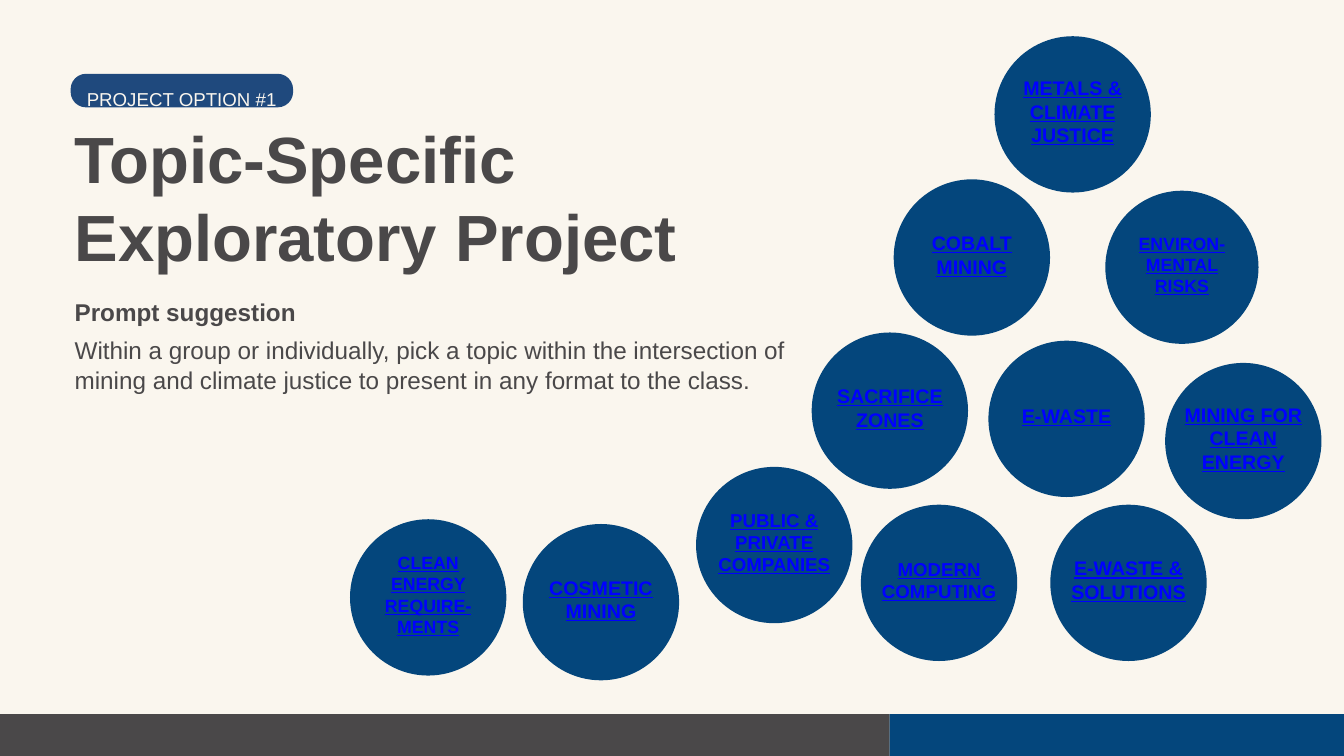
from pptx import Presentation
from pptx.dml.color import RGBColor
from pptx.enum.shapes import MSO_SHAPE
from pptx.enum.text import MSO_ANCHOR, MSO_AUTO_SIZE, PP_ALIGN
from pptx.oxml.ns import qn
from pptx.util import Cm, Pt

RECTANGLE = MSO_SHAPE.RECTANGLE
OVAL = MSO_SHAPE.OVAL
ROUNDED = MSO_SHAPE.ROUNDED_RECTANGLE
TOP, MIDDLE = MSO_ANCHOR.TOP, MSO_ANCHOR.MIDDLE
LEFT, CENTER = PP_ALIGN.LEFT, PP_ALIGN.CENTER

CREAM, CHARCOAL, NAVY, PILL_BLUE, LINK_BLUE = "FAF6EE", "4A4849", "04467C", "1F497D", "0000FF"

TOPICS = [
    ("MINING FOR CLEAN ENERGY", 44.04, 13.72, 5.91, 21),
    ("PUBLIC & PRIVATE COMPANIES", 26.31, 17.65, 5.91, 20),
    ("MODERN COMPUTING", 32.54, 19.08, 5.91, 20),
    ("E-WASTE & SOLUTIONS", 39.7, 19.08, 5.91, 21),
    ("CLEAN ENERGY REQUIRE-MENTS", 13.23, 19.63, 5.91, 19),
    ("SACRIFICE ZONES", 30.68, 12.57, 5.91, 21),
    ("COSMETIC MINING", 19.76, 19.81, 5.91, 21),
    ("ENVIRON-MENTAL RISKS", 41.78, 7.21, 5.79, 19),
    ("METALS & CLIMATE JUSTICE", 37.59, 1.37, 5.91, 21),
    ("E-WASTE", 37.36, 12.88, 5.91, 21),
    ("COBALT MINING", 33.78, 6.78, 5.91, 21),
]


def color(value):
    return RGBColor.from_string(value)


def set_attributes(target, values):
    for name, value in values.items():
        setattr(target, name, value)


def place(shape, left, top, width, height):
    set_attributes(shape, {"left": Cm(left), "top": Cm(top), "width": Cm(width), "height": Cm(height)})


def add_filled(shapes, kind, box, fill):
    shape = shapes.add_shape(kind, *map(Cm, box))
    shape.shadow.inherit = False
    shape.fill.solid()
    shape.fill.fore_color.rgb = color(fill)
    shape.line.fill.background()
    return shape


def format_frame(frame, anchor=TOP, margin=0):
    set_attributes(frame, {
        "word_wrap": True, "auto_size": MSO_AUTO_SIZE.NONE, "vertical_anchor": anchor,
        "margin_left": Cm(margin), "margin_right": Cm(margin),
        "margin_top": Cm(margin), "margin_bottom": Cm(margin),
    })


def write(paragraph, text, size, fill, spacing, alignment=LEFT, before=0, **font):
    set_attributes(paragraph, {
        "alignment": alignment, "line_spacing": spacing,
        "space_before": Pt(before), "space_after": Pt(0),
    })
    run = paragraph.add_run()
    run.text = text
    set_attributes(run.font, {"name": "Arial", "size": Pt(size), **font})
    run.font.color.rgb = color(fill)


def add_text(shapes, box, text, size, fill, spacing, anchor=TOP, margin=0, **style):
    frame = shapes.add_textbox(*map(Cm, box)).text_frame
    format_frame(frame, anchor, margin)
    write(frame.paragraphs[0], text, size, fill, spacing, **style)


def fill_title(slide, left, top, width, height):
    title = slide.shapes.title
    place(title, left, top, width, height)
    format_frame(title.text_frame)
    write(title.text_frame.paragraphs[0], "Topic-Specific Exploratory Project",
          70, CHARCOAL, Pt(84), bold=True)


def fill_prompt(slide, left, top, width, height):
    body = slide.placeholders[1]
    place(body, left, top, width, height)
    frame = body.text_frame
    format_frame(frame)
    lines = [
        ("Prompt suggestion", 0, True),
        ("Within a group or individually, pick a topic within the intersection of "
         "mining and climate justice to present in any format to the class.", 9, False),
    ]
    for index, (text, before, bold) in enumerate(lines):
        paragraph = frame.add_paragraph() if index else frame.paragraphs[0]
        properties = paragraph._p.get_or_add_pPr()
        properties.set("marL", "0")
        properties.set("indent", "0")
        properties.append(properties.makeelement(qn("a:buNone"), {}))
        write(paragraph, text, 26, CHARCOAL, Pt(32), before=before, bold=bold)


def add_option_label(slide, left, top, width, height):
    pill = add_filled(slide.shapes, ROUNDED, (left, top, width, height), PILL_BLUE)
    pill.adjustments[0] = 0.46
    add_text(slide.shapes, (left + 0.61, top + 0.2, width - 0.61, height - 0.4),
             "PROJECT OPTION #1", 20, CREAM, 1.4)


def add_topic(slide, text, left, top, diameter, size):
    shapes = slide.shapes.add_group_shape().shapes
    add_filled(shapes, OVAL, (left, top, diameter, diameter), NAVY)
    width, height = diameter * 0.81, diameter * 0.86
    box = (left + (diameter - width) / 2, top + diameter * 0.05, width, height)
    add_text(shapes, box, text, size, LINK_BLUE, Pt(size * 1.2), MIDDLE, 0.13,
             alignment=CENTER, bold=True, underline=True)


def add_footer(slide, left, top, width, height, split):
    add_filled(slide.shapes, RECTANGLE, (left, top, split - left, height), CHARCOAL)
    add_filled(slide.shapes, RECTANGLE, (split, top, left + width - split, height), NAVY)


def main():
    presentation = Presentation()
    presentation.slide_width, presentation.slide_height = Cm(50.8), Cm(28.58)
    slide = presentation.slides.add_slide(presentation.slide_layouts[1])
    slide.background.fill.solid()
    slide.background.fill.fore_color.rgb = color(CREAM)
    add_footer(slide, -3.45, 27, 56.84, 1.58, split=33.63)
    fill_title(slide, 2.82, 4.47, 29.87, 5.99)
    fill_prompt(slide, 2.82, 11.2, 29.67, 3.68)
    for topic in TOPICS:
        add_topic(slide, *topic)
    add_option_label(slide, 2.67, 2.79, 8.41, 1.27)
    presentation.save("out.pptx")


if __name__ == "__main__":
    main()
